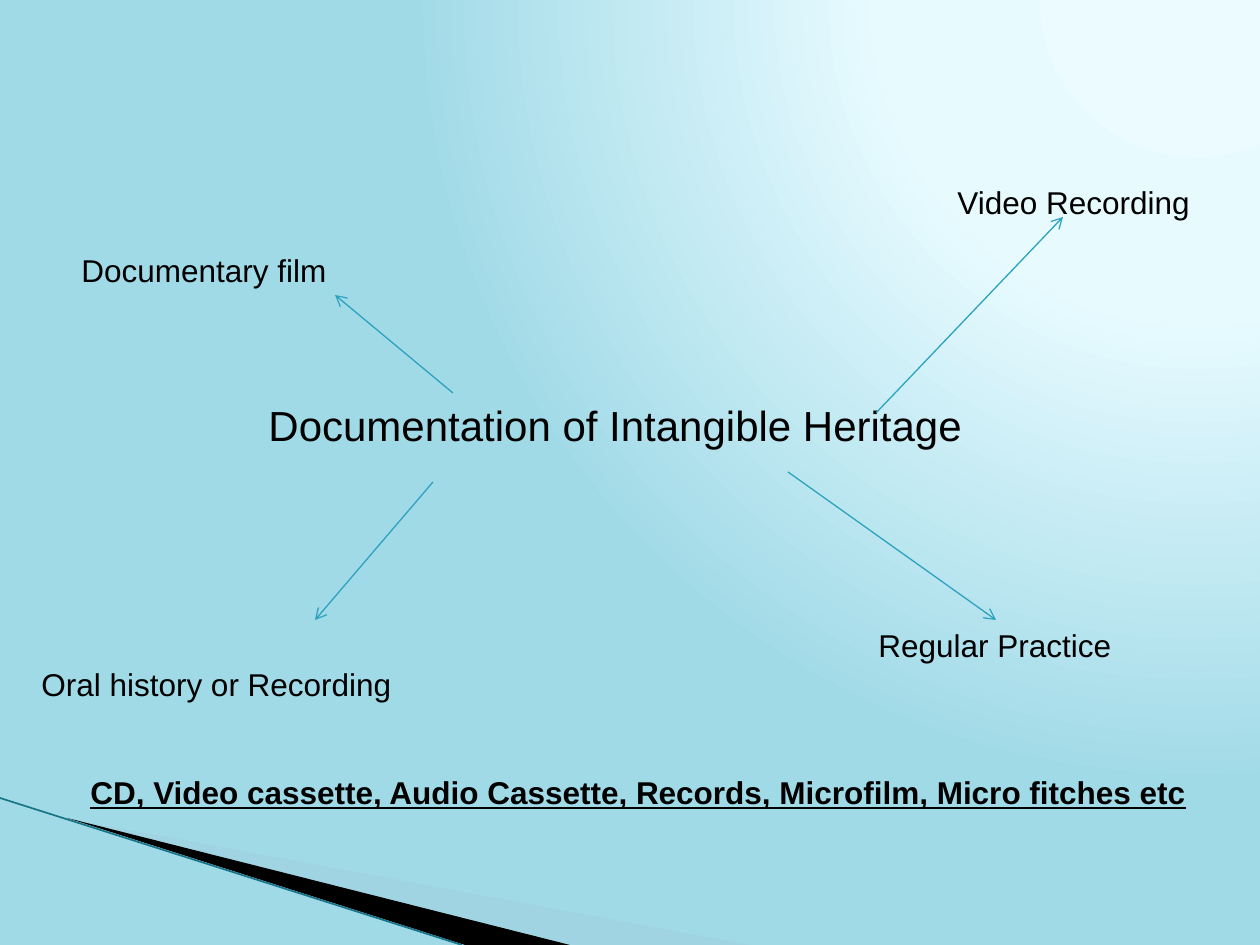
"""Builds the slide on ways of documenting intangible heritage."""
from lxml.etree import SubElement
from pptx import Presentation
from pptx.dml.color import RGBColor
from pptx.enum.shapes import MSO_CONNECTOR as Connector
from pptx.enum.text import MSO_AUTO_SIZE as AutoSize
from pptx.oxml.ns import qn
from pptx.util import Inches, Pt

PX = Inches(1) / 126
FONT = "Arial"
BLACK = RGBColor(0x00, 0x00, 0x00)
TEAL = RGBColor(0x2D, 0xA2, 0xBF)
DARK_TEAL = RGBColor(0x18, 0x74, 0x89)
PALE_BLUE = RGBColor(0xA0, 0xCB, 0xDC)
GLOW_STOPS = [
    (0, RGBColor(0xEB, 0xFB, 0xFF)),
    (40, RGBColor(0xE7, 0xFB, 0xFF)),
    (100, RGBColor(0xA1, 0xDA, 0xE7)),
]
GLOW_CENTRE = {"l": 95, "t": -106, "r": 5, "b": 206}

WEDGES = [
    ([(69, 819), (750, 945), (575, 945)], PALE_BLUE, 40),
    ([(67, 818), (570, 945), (465, 945)], BLACK, 100),
]
EDGE = ((0, 798), (462, 945))

TOPIC = ("Documentation of Intangible Heritage", (256, 393, 726, 63), 24)
METHODS = [
    ("Oral history or Recording", (29, 659, 379, 50), 18),
    ("Video Recording", (945, 177, 260, 50), 18),
    ("Documentary film", (69, 245, 273, 50), 18),
    ("Regular Practice", (866, 620, 261, 50), 18),
]
MEDIA = (
    "CD, Video cassette, Audio Cassette, Records, Microfilm, Micro fitches etc",
    (78, 767, 1182, 50),
    18,
)
ARROWS = [
    ((433, 482), (315, 620)),
    ((453, 393), (335, 295)),
    ((876, 413), (1063, 217)),
    ((788, 472), (996, 620)),
]


def emu(*lengths):
    return [round(length * PX) for length in lengths]


def paint_glow(slide):
    slide.background.fill.gradient()
    gradient = slide.element.find(".//" + qn("a:gradFill"))
    for child in list(gradient):
        gradient.remove(child)
    stops = SubElement(gradient, qn("a:gsLst"))
    for percent, colour in GLOW_STOPS:
        stop = SubElement(stops, qn("a:gs"), pos=str(percent * 1000))
        SubElement(stop, qn("a:srgbClr"), val=str(colour))
    circle = SubElement(gradient, qn("a:path"), path="circle")
    sides = {side: str(percent * 1000) for side, percent in GLOW_CENTRE.items()}
    SubElement(circle, qn("a:fillToRect"), **sides)


def add_wedge(slide, corners, colour, opacity):
    builder = slide.shapes.build_freeform(*corners[0], scale=PX)
    builder.add_line_segments(corners[1:], close=True)
    wedge = builder.convert_to_shape()
    wedge.shadow.inherit = False
    wedge.fill.solid()
    wedge.fill.fore_color.rgb = colour
    wedge.line.fill.background()
    if opacity < 100:
        tint = wedge.element.spPr.find(".//" + qn("a:srgbClr"))
        SubElement(tint, qn("a:alpha"), val=str(opacity * 1000))


def add_line(slide, start, end, colour, width, arrow=False):
    line = slide.shapes.add_connector(Connector.STRAIGHT, *emu(*start, *end))
    line.line.color.rgb = colour
    line.line.width = Pt(width)
    if arrow:
        SubElement(line.line._get_or_add_ln(), qn("a:tailEnd"), type="arrow")
    SubElement(line.element.spPr, qn("a:effectLst"))


def add_label(slide, text, place, size, wrap=False):
    frame = slide.shapes.add_textbox(*emu(*place)).text_frame
    frame.text = text
    frame.word_wrap = wrap
    frame.auto_size = AutoSize.SHAPE_TO_FIT_TEXT
    font = frame.paragraphs[0].runs[0].font
    font.name = FONT
    font.size = Pt(size)
    font.color.rgb = BLACK
    return font


def main():
    deck = Presentation()
    deck.slide_width, deck.slide_height = Inches(10), Inches(7.5)
    slide = deck.slides.add_slide(deck.slide_layouts[6])
    paint_glow(slide)
    for wedge in WEDGES:
        add_wedge(slide, *wedge)
    add_line(slide, *EDGE, DARK_TEAL, 0.95)
    for label in [TOPIC, *METHODS]:
        add_label(slide, *label)
    media_font = add_label(slide, *MEDIA, wrap=True)
    media_font.bold = True
    media_font.underline = True
    for start, end in ARROWS:
        add_line(slide, start, end, TEAL, 0.75, arrow=True)
    deck.save("out.pptx")


if __name__ == "__main__":
    main()
